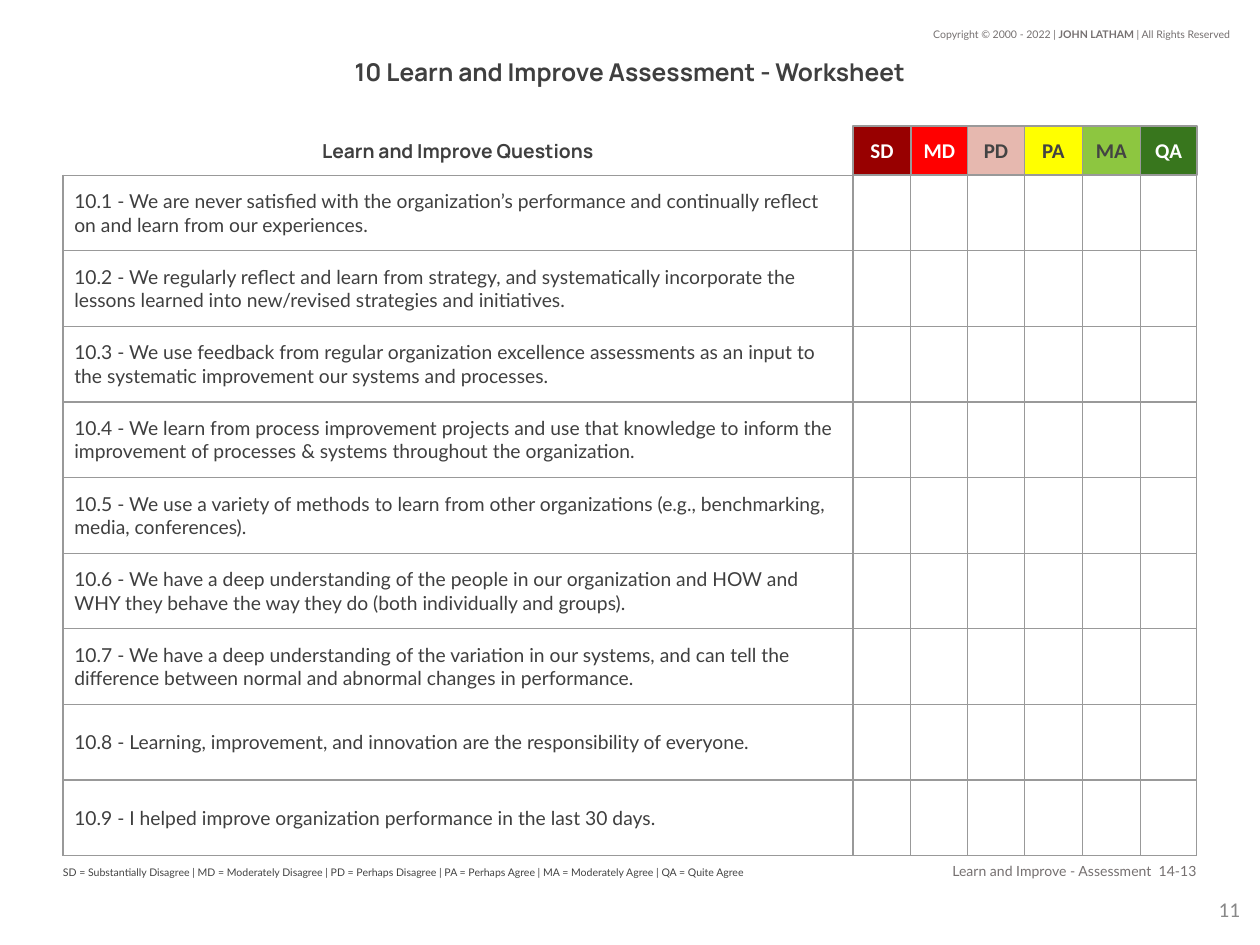
from dataclasses import dataclass

from lxml.etree import SubElement
from pptx import Presentation
from pptx.dml.color import RGBColor
from pptx.enum.shapes import MSO_SHAPE
from pptx.enum.text import MSO_ANCHOR, MSO_AUTO_SIZE, PP_ALIGN
from pptx.oxml.ns import qn
from pptx.util import Emu, Pt

EMU_PER_PX = 9144  # 100 px to the inch


@dataclass(frozen=True)
class Theme:
    ink: str = "3F3F3F"
    label: str = "434343"
    muted: str = "757070"
    page: str = "888888"
    white: str = "FFFFFF"
    border: str = "999999"
    border_width: float = 0.75
    title: int = 14
    rating: int = 12
    body: int = 11
    footer: int = 8
    small: int = 6
    body_font: str = "Lato"
    heading_font: str = "Manrope"
    label_font: str = "Calibri"


@dataclass(frozen=True)
class Box:
    left: int
    top: int
    width: int
    height: int


@dataclass(frozen=True)
class Style:
    font: str
    size: int
    color: str
    bold: bool = False
    align: PP_ALIGN = PP_ALIGN.LEFT


@dataclass(frozen=True)
class Rating:
    code: str
    fill: str
    color: str


THEME = Theme()
RATINGS = [
    Rating("SD", "980000", THEME.white),
    Rating("MD", "FF0000", THEME.white),
    Rating("PD", "E6B8AF", THEME.label),
    Rating("PA", "FFFF00", THEME.label),
    Rating("MA", "8DC640", THEME.label),
    Rating("QA", "38761D", THEME.white),
]
QUESTIONS = [
    "We are never satisfied with the organization’s performance and continually reflect on and learn from our experiences.",
    "We regularly reflect and learn from strategy, and systematically incorporate the lessons learned into new/revised strategies and initiatives.",
    "We use feedback from regular organization excellence assessments as an input to the systematic improvement our systems and processes.",
    "We learn from process improvement projects and use that knowledge to inform the improvement of processes & systems throughout the organization.",
    "We use a variety of methods to learn from other organizations (e.g., benchmarking, media, conferences).",
    "We have a deep understanding of the people in our organization and HOW and WHY they behave the way they do (both individually and groups).",
    "We have a deep understanding of the variation in our systems, and can tell the difference between normal and abnormal changes in performance.",
    "Learning, improvement, and innovation are the responsibility of everyone.",
    "I helped improve organization performance in the last 30 days.",
]
LEFT, WIDTH, QUESTION_WIDTH = 50, 900, 627
HEADER_TOP, TABLE_TOP, ROW_HEIGHT = 100, 139, 60
RATING_WIDTH = WIDTH - QUESTION_WIDTH
# Column edges share the space right of the questions equally
EDGES = [LEFT + QUESTION_WIDTH + round(RATING_WIDTH * i / len(RATINGS)) for i in range(len(RATINGS) + 1)]


def px(length: int) -> Emu:
    return Emu(length * EMU_PER_PX)


def place(box: Box) -> tuple:
    return px(box.left), px(box.top), px(box.width), px(box.height)


def set_all(target, values: dict) -> None:
    for name, value in values.items():
        setattr(target, name, value)


def write(frame, runs: list, style: Style) -> None:
    """Write (text, bold) runs into the first paragraph."""
    paragraph = frame.paragraphs[0]
    paragraph.alignment = style.align
    for text, bold in runs:
        run = paragraph.add_run()
        run.text = text
        set_all(run.font, {"name": style.font, "size": Pt(style.size), "bold": bold})
        run.font.color.rgb = RGBColor.from_string(style.color)


def fill_frame(shape, text: str, style: Style, **changes) -> None:
    frame = shape.text_frame
    margins = {f"margin_{side}": px(10) for side in ("left", "top", "right", "bottom")}
    set_all(frame, {"word_wrap": True, "auto_size": MSO_AUTO_SIZE.NONE,
                    "vertical_anchor": MSO_ANCHOR.MIDDLE, **margins, **changes})
    write(frame, [(text, style.bold)] if text else [], style)


def add_text(slide, box: Box, text: str, style: Style, **changes):
    shape = slide.shapes.add_textbox(*place(box))
    fill_frame(shape, text, style, **changes)
    return shape


def add_rating(slide, box: Box, rating: Rating) -> None:
    shape = slide.shapes.add_shape(MSO_SHAPE.RECTANGLE, *place(box))
    shape.shadow.inherit = False
    shape.fill.solid()
    shape.fill.fore_color.rgb = RGBColor.from_string(rating.fill)
    shape.line.color.rgb = RGBColor.from_string(THEME.border)
    shape.line.width = Pt(THEME.border_width)
    fill_frame(shape, rating.code,
               Style(THEME.label_font, THEME.rating, rating.color, True, PP_ALIGN.CENTER))


def format_cell(cell) -> None:
    set_all(cell, {"vertical_anchor": MSO_ANCHOR.MIDDLE, "margin_left": px(9),
                   "margin_right": px(9), "margin_top": px(9), "margin_bottom": px(9)})
    cell.fill.background()
    properties = cell._tc.get_or_add_tcPr()
    for index, side in enumerate(("lnL", "lnR", "lnT", "lnB")):
        line = SubElement(properties, qn(f"a:{side}"), w=str(Pt(THEME.border_width)))
        SubElement(SubElement(line, qn("a:solidFill")), qn("a:srgbClr"), val=THEME.border)
        properties.insert(index, line)  # borders come before the fill


def add_questions(slide) -> None:
    box = Box(LEFT, TABLE_TOP, WIDTH, ROW_HEIGHT * len(QUESTIONS))
    table = slide.shapes.add_table(len(QUESTIONS), len(RATINGS) + 1, *place(box)).table
    set_all(table, {"first_row": False, "horz_banding": False})
    edges = [LEFT, *EDGES]
    for column, start, end in zip(table.columns, edges, edges[1:]):
        column.width = px(end - start)
    style = Style(THEME.body_font, THEME.body, THEME.ink)
    for number, (row, question) in enumerate(zip(table.rows, QUESTIONS), start=1):
        row.height = px(ROW_HEIGHT)
        for cell in row.cells:
            format_cell(cell)
        write(row.cells[0].text_frame, [(f"10.{number} - {question}", False)], style)


def main() -> None:
    presentation = Presentation()
    set_all(presentation, {"slide_width": px(1000), "slide_height": px(750)})
    slide = presentation.slides.add_slide(presentation.slide_layouts[5])

    # Title and copyright line
    title = slide.shapes.title
    set_all(title, dict(zip(("left", "top", "width", "height"), place(Box(LEFT, 42, WIDTH, 30)))))
    heading = Style(THEME.heading_font, THEME.title, THEME.ink, True, PP_ALIGN.CENTER)
    fill_frame(title, "10 Learn and Improve Assessment - Worksheet", heading)
    copyright_style = Style(THEME.body_font, THEME.small, THEME.muted, align=PP_ALIGN.RIGHT)
    notice = add_text(slide, Box(728, 17, 258, 20), "", copyright_style,
                      vertical_anchor=MSO_ANCHOR.TOP, margin_top=px(5), margin_bottom=px(5))
    write(notice.text_frame, [("Copyright © 2000 - 2022 | ", False), ("JOHN LATHAM ", True),
                              ("| All Rights Reserved", False)], copyright_style)

    # Header row and question table
    header_height = TABLE_TOP - HEADER_TOP
    add_text(slide, Box(LEFT, HEADER_TOP, QUESTION_WIDTH, header_height), "Learn and Improve Questions",
             Style(THEME.heading_font, THEME.body, THEME.ink, True, PP_ALIGN.CENTER))
    add_questions(slide)
    for rating, start, end in zip(RATINGS, EDGES, EDGES[1:]):
        add_rating(slide, Box(start, HEADER_TOP, end - start, header_height), rating)

    # Legend, footer and page number
    add_text(slide, Box(LEFT, 678, QUESTION_WIDTH, 28),
             "SD = Substantially Disagree | MD = Moderately Disagree | PD = Perhaps Disagree | "
             "PA = Perhaps Agree | MA = Moderately Agree | QA = Quite Agree",
             Style(THEME.body_font, THEME.small, THEME.label), margin_left=0)
    add_text(slide, Box(669, 680, 281, 22), "Learn and Improve - Assessment  14-13",
             Style(THEME.body_font, THEME.footer, THEME.muted, align=PP_ALIGN.RIGHT), margin_right=0)
    add_text(slide, Box(934, 693, 60, 57), "11",
             Style(THEME.label_font, THEME.rating, THEME.page, align=PP_ALIGN.RIGHT))

    presentation.save("out.pptx")


if __name__ == "__main__":
    main()
